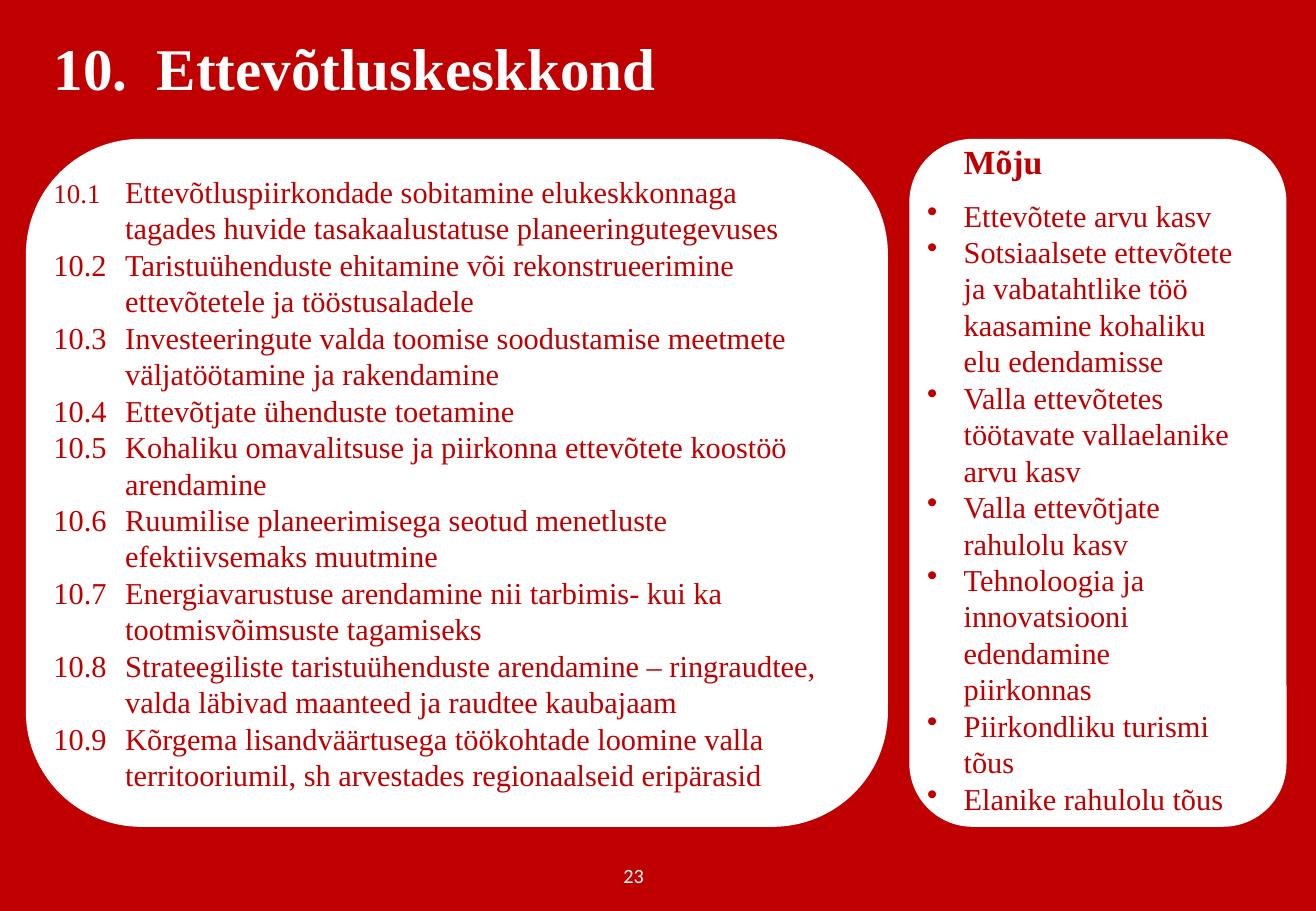
from dataclasses import dataclass

from lxml.etree import SubElement
from pptx import Presentation
from pptx.dml.color import RGBColor as Rgb
from pptx.enum.shapes import MSO_SHAPE as Shape
from pptx.enum.text import MSO_ANCHOR as Anchor, PP_ALIGN as Align
from pptx.oxml.ns import qn
from pptx.util import Emu, Pt

PX = 9144  # EMU per px, 100 px to the inch
COLORS = {"red": "C00000", "white": "FFFFFF"}
SERIF = "Times New Roman"


@dataclass(frozen=True)
class Box:
    left: int
    top: int
    width: int
    height: int

    def emu(self) -> list[Emu]:
        return [px(n) for n in (self.left, self.top, self.width, self.height)]


@dataclass(frozen=True)
class Style:
    size: int
    color: str = "red"
    font: str = SERIF
    bold: bool = False
    margin: int = 0
    hang: int = 0
    bullet: str = ""
    after: int = 0
    spacing: float = 1.0
    align: Align = Align.LEFT


@dataclass(frozen=True)
class Panel:
    card: Box
    text: Box
    lines: list[tuple[str, Style]]


TITLE = Style(35, "white", bold=True, margin=85, hang=85, spacing=0.9)
NUMBER = Style(12, "white", "Calibri", align=Align.CENTER)
ACTION = Style(18, margin=59, hang=59)
HEAD = Style(20, bold=True, margin=39, after=9)
IMPACT = Style(18, margin=39, hang=30, bullet="•")

ACTIONS = [
    "Ettevõtluspiirkondade sobitamine elukeskkonnaga tagades huvide "
    "tasakaalustatuse planeeringutegevuses",
    "Taristuühenduste ehitamine või rekonstrueerimine ettevõtetele ja tööstusaladele",
    "Investeeringute valda toomise soodustamise meetmete väljatöötamine ja rakendamine",
    "Ettevõtjate ühenduste toetamine",
    "Kohaliku omavalitsuse ja piirkonna ettevõtete koostöö arendamine",
    "Ruumilise planeerimisega seotud menetluste efektiivsemaks muutmine",
    "Energiavarustuse arendamine nii tarbimis- kui ka tootmisvõimsuste tagamiseks",
    "Strateegiliste taristuühenduste arendamine – ringraudtee, valda läbivad "
    "maanteed ja raudtee kaubajaam",
    "Kõrgema lisandväärtusega töökohtade loomine valla territooriumil, "
    "sh arvestades regionaalseid eripärasid",
]
IMPACTS = [
    "Ettevõtete arvu kasv",
    "Sotsiaalsete ettevõtete ja vabatahtlike töö kaasamine kohaliku elu edendamisse",
    "Valla ettevõtetes töötavate vallaelanike arvu kasv",
    "Valla ettevõtjate rahulolu kasv",
    "Tehnoloogia ja innovatsiooni edendamine piirkonnas",
    "Piirkondliku turismi tõus",
    "Elanike rahulolu tõus",
]
PANELS = [
    Panel(Box(22, 115, 708, 565), Box(39, 135, 648, 525),
          [(f"10.{n}\t{text}", ACTION) for n, text in enumerate(ACTIONS, 1)]),
    Panel(Box(749, 115, 309, 565), Box(749, 108, 279, 572),
          [("Mõju", HEAD)] + [(text, IMPACT) for text in IMPACTS]),
]


def px(n: int) -> Emu:
    return Emu(n * PX)


def color(name: str) -> Rgb:
    return Rgb.from_string(COLORS[name])


def format_par(par, style: Style) -> None:
    font = par.font
    font.name, font.size, font.bold = style.font, Pt(style.size), style.bold
    font.color.rgb = color(style.color)
    par.alignment = style.align
    par.line_spacing = style.spacing
    par.space_after = Pt(style.after)
    props = par._p.get_or_add_pPr()
    props.set("marL", str(px(style.margin)))
    props.set("indent", str(px(-style.hang)))
    if style.bullet:
        mark = SubElement(props, qn("a:buChar"))
        mark.set("char", style.bullet)
        props.remove(mark)
        props.find(qn("a:defRPr")).addprevious(mark)


def add_text(slide, box: Box, lines: list[tuple[str, Style]], wrap: bool = True):
    shape = slide.shapes.add_textbox(*box.emu())
    frame = shape.text_frame
    frame.word_wrap = wrap
    frame.vertical_anchor = Anchor.MIDDLE
    frame.margin_left = frame.margin_right = px(5)
    frame.margin_top = frame.margin_bottom = px(5)
    for i, (text, style) in enumerate(lines):
        par = frame.add_paragraph() if i else frame.paragraphs[0]
        par.text = text
        format_par(par, style)
    return shape


def add_card(slide, box: Box) -> None:
    card = slide.shapes.add_shape(Shape.ROUNDED_RECTANGLE, *box.emu())
    card.shadow.inherit = False
    card.fill.solid()
    card.fill.fore_color.rgb = color("white")
    card.line.color.rgb = color("white")
    card.line.width = Pt(1)


def main() -> None:
    deck = Presentation()
    deck.slide_width, deck.slide_height = px(1083), px(750)
    slide = deck.slides.add_slide(deck.slide_layouts[6])
    back = slide.background.fill
    back.solid()
    back.fore_color.rgb = color("red")

    for panel in PANELS:
        add_card(slide, panel.card)
        text = add_text(slide, panel.text, panel.lines)
        if panel.lines[0][1] is ACTION:
            # The first number is set smaller than the rest
            par = text.text_frame.paragraphs[0]
            mark, rest = par.text.split("\t")
            par.clear()
            for part, size in ((mark + "\t", 16), (rest, 18)):
                run = par.add_run()
                run.text = part
                run.font.size = Pt(size)

    add_text(slide, Box(39, 29, 985, 60), [("10.\tEttevõtluskeskkond", TITLE)])
    add_text(slide, Box(507, 706, 29, 29), [("23", NUMBER)], wrap=False)
    deck.save("out.pptx")


if __name__ == "__main__":
    main()
